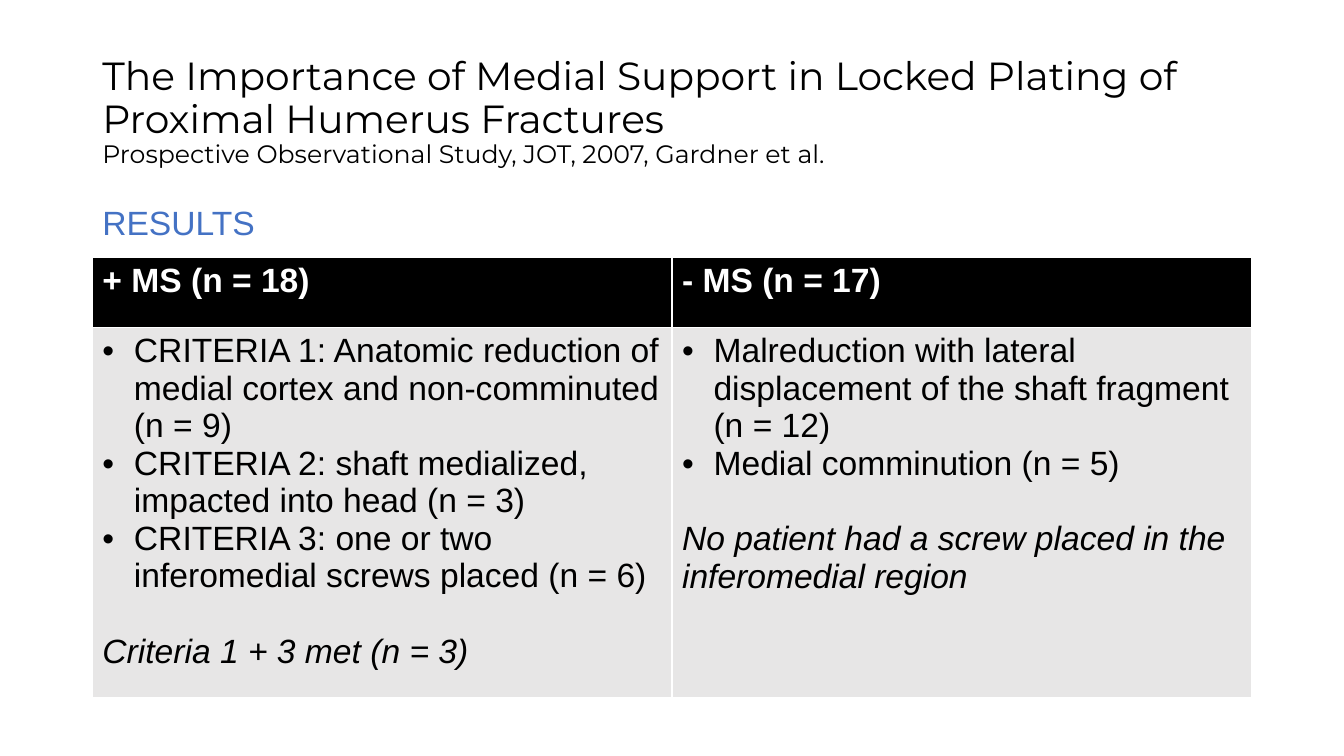
from lxml.etree import SubElement
from pptx import Presentation
from pptx.dml.color import RGBColor as RGB
from pptx.enum.text import MSO_ANCHOR as ANCHOR, PP_ALIGN as ALIGN
from pptx.oxml.ns import qn
from pptx.util import Pt

PX = 9525  # EMU in one px, 96 px to the inch
HUES = {"ink": "000000", "paper": "FFFFFF", "blue": "4472C4", "gray": "E7E6E6"}
LEFT, WIDE = 88, 1104
DENT = 30

heads = ["+ MS (n = 18)", "- MS (n = 17)"]
lists = [
    ["CRITERIA 1: Anatomic reduction of medial cortex and non-comminuted (n = 9)",
     "CRITERIA 2: shaft medialized, impacted into head (n = 3)",
     "CRITERIA 3: one or two inferomedial screws placed (n = 6)"],
    ["Malreduction with lateral displacement of the shaft fragment (n = 12)",
     "Medial comminution (n = 5)"],
]
notes = ["Criteria 1 + 3 met (n = 3)",
         "No patient had a screw placed in the inferomedial region"]


def style(run, size, hue, face="Arial", bold=False, slant=False):
    font = run.font
    font.name, font.size = face, Pt(size)
    font.bold, font.italic = bold, slant
    font.color.rgb = RGB.from_string(HUES[hue])


def place(shape, *box):
    """Set left, top, width and height in px."""
    shape.left, shape.top, shape.width, shape.height = [n * PX for n in box]


deck = Presentation()
deck.slide_width, deck.slide_height = 1280 * PX, 720 * PX
slide = deck.slides.add_slide(deck.slide_layouts[5])

# Title with the study on its own line
title = slide.shapes.title
place(title, LEFT, 38, WIDE, 139)
frame = title.text_frame
frame.text = ("The Importance of Medial Support in Locked Plating of Proximal Humerus Fractures\v"
              "Prospective Observational Study, JOT, 2007, Gardner et al.")
frame.word_wrap = True
frame.vertical_anchor = ANCHOR.MIDDLE
para = frame.paragraphs[0]
para.alignment, para.line_spacing = ALIGN.LEFT, 0.9
for run, size in zip(para.runs, [28, 18]):
    style(run, size, "ink", "Montserrat")
SubElement(para._p.find(qn("a:br")), qn("a:rPr"), sz="2800")

# Section label
label = slide.shapes.add_textbox(0, 0, 0, 0)
place(label, LEFT, 192, 576, 48)
label.text_frame.text = "RESULTS"
label.text_frame.word_wrap = True
para = label.text_frame.paragraphs[0]
para.line_spacing = 0.9
style(para.runs[0], 24, "blue")

# Results table
frame = slide.shapes.add_table(2, 2, LEFT * PX, 245 * PX, WIDE * PX, 397 * PX)
table = frame.table
table.horz_banding = False
table.rows[0].height, table.rows[1].height = 67 * PX, 330 * PX

for col, (head, items, note) in enumerate(zip(heads, lists, notes)):
    top, body = table.cell(0, col), table.cell(1, col)
    for cell, hue in [(top, "ink"), (body, "gray")]:
        cell.fill.solid()
        cell.fill.fore_color.rgb = RGB.from_string(HUES[hue])

    top.text_frame.text = head
    style(top.text_frame.paragraphs[0].runs[0], 24, "paper", bold=True)

    body.text_frame.text = "\n".join(items + [note])
    *points, last = body.text_frame.paragraphs
    for para in points:
        props = para._p.get_or_add_pPr()
        props.set("marL", str(DENT * PX))
        props.set("indent", str(-DENT * PX))
        SubElement(props, qn("a:buFont"), typeface="Arial")
        SubElement(props, qn("a:buChar"), char="•")
        style(para.runs[0], 24, "ink")
    last.space_before = Pt(27)
    style(last.runs[0], 24, "ink", slant=True)

deck.save("out.pptx")
